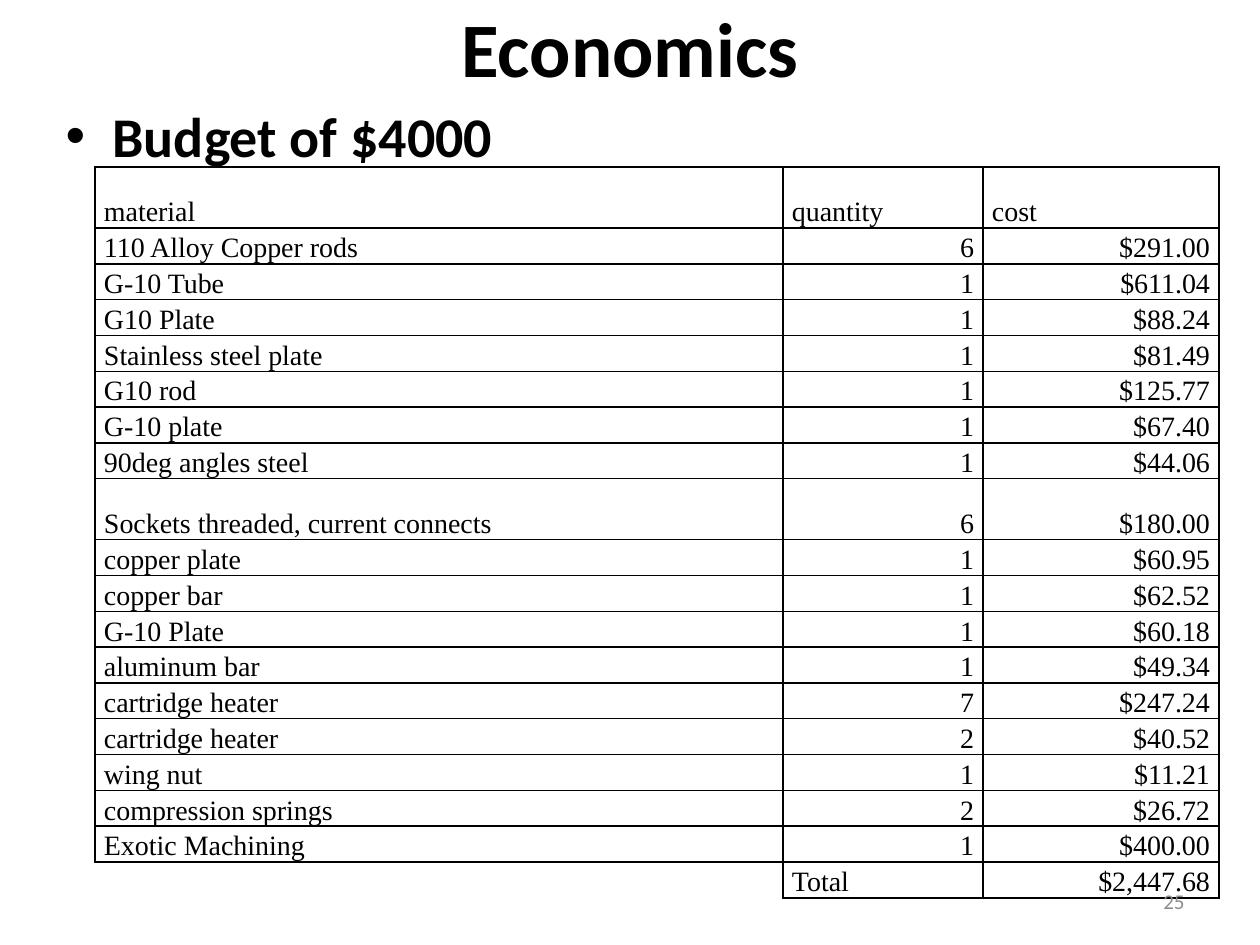
from lxml import etree
from pptx import Presentation, util as u
from pptx.dml.color import RGBColor
from pptx.enum import text
from pptx.oxml import ns

PX_PER_INCH = 126
BLACK, GREY = "000000", "8C8C8C"
NO_STYLE = "{2D5ABB26-0587-4C30-8999-92F81FD0307C}"
LEFT, CENTER, RIGHT = (getattr(text.PP_ALIGN, side) for side in ("LEFT", "CENTER", "RIGHT"))

COLUMNS = (688, 200, 236)
ROW, TALL_ROW = 34, 61
TALL_ITEMS = ("material", "Sockets threaded, current connects")
BUDGET = [
    ("material", "quantity", "cost"),
    ("110 Alloy Copper rods", "6", "$291.00"),
    ("G-10 Tube", "1", "$611.04"),
    ("G10 Plate", "1", "$88.24"),
    ("Stainless steel plate", "1", "$81.49"),
    ("G10 rod", "1", "$125.77"),
    ("G-10 plate", "1", "$67.40"),
    ("90deg angles steel", "1", "$44.06"),
    ("Sockets threaded, current connects", "6", "$180.00"),
    ("copper plate", "1", "$60.95"),
    ("copper bar", "1", "$62.52"),
    ("G-10 Plate", "1", "$60.18"),
    ("aluminum bar", "1", "$49.34"),
    ("cartridge heater", "7", "$247.24"),
    ("cartridge heater", "2", "$40.52"),
    ("wing nut", "1", "$11.21"),
    ("compression springs", "2", "$26.72"),
    ("Exotic Machining", "1", "$400.00"),
    ("", "Total", "$2,447.68"),
]


def px(length):
    return u.Inches(length / PX_PER_INCH)


def paint(target, colour):
    target.rgb = RGBColor.from_string(colour)


def apply(target, **formats):
    for name, value in formats.items():
        setattr(target, name, value)


def place(shape, left, top, width, height):
    apply(shape, left=px(left), top=px(top), width=px(width), height=px(height))


def write(para, words, size, face="Calibri", colour=BLACK, bold=False, **formats):
    apply(para, **formats)
    span = para.add_run()
    span.text = words
    apply(span.font, size=u.Pt(size), name=face, bold=bold)
    paint(span.font.color, colour)


def add_bullet(para, indent):
    """Give the paragraph a round bullet with a hanging indent."""
    properties = para._p.get_or_add_pPr()
    properties.set("marL", str(px(indent)))
    properties.set("indent", str(-px(indent)))
    etree.SubElement(properties, ns.qn("a:buChar"), char="•")


def add_borders(cell, sides):
    """Draw black one-point lines; they come before the fill in the cell."""
    properties = cell._tc.get_or_add_tcPr()
    for index, side in enumerate(sides):
        line = etree.Element(ns.qn(f"a:ln{side}"), w=str(u.Pt(1)))
        fill = etree.SubElement(line, ns.qn("a:solidFill"))
        etree.SubElement(fill, ns.qn("a:srgbClr"), val=BLACK)
        properties.insert(index, line)


def fill_cell(cell, words, align):
    apply(cell, margin_left=px(9), margin_right=px(9), margin_top=0, margin_bottom=0,
          vertical_anchor=text.MSO_ANCHOR.BOTTOM)
    cell.fill.background()
    para = cell.text_frame.paragraphs[0]
    if words:
        write(para, words, 16, "Times New Roman", alignment=align, line_spacing=1.15)
        add_borders(cell, "LRTB")
    else:
        etree.SubElement(para._p, ns.qn("a:endParaRPr"), sz="1600")
        add_borders(cell, "RT")


def add_budget_table(page, left, top):
    heights = [TALL_ROW if row[0] in TALL_ITEMS else ROW for row in BUDGET]
    frame = page.shapes.add_table(len(BUDGET), len(COLUMNS), px(left), px(top),
                                  px(sum(COLUMNS)), px(sum(heights)))
    table = frame.table
    apply(table, first_row=False, horz_banding=False)
    table._tbl.tblPr.find(ns.qn("a:tableStyleId")).text = NO_STYLE
    for column, width in zip(table.columns, COLUMNS):
        column.width = px(width)
    for r, (row, height) in enumerate(zip(BUDGET, heights)):
        table.rows[r].height = px(height)
        for c, words in enumerate(row):
            is_number = words.lstrip("$")[:1].isdigit() and c > 0
            fill_cell(table.cell(r, c), words, RIGHT if is_number else LEFT)


def add_page_number(page, number):
    box = page.shapes.add_textbox(0, 0, 0, 0)
    place(box, 903, 876, 294, 50)
    apply(box.text_frame, word_wrap=True, vertical_anchor=text.MSO_ANCHOR.MIDDLE)
    write(box.text_frame.paragraphs[0], number, 12, colour=GREY, alignment=RIGHT)


def main():
    deck = Presentation()
    apply(deck, slide_width=px(1260), slide_height=px(945))
    page = deck.slides.add_slide(deck.slide_layouts[1])

    # Title and budget bullet
    title, body = page.placeholders
    place(title, 0, -32, 1134, 158)
    title.left = px(63)
    title.text_frame.vertical_anchor = text.MSO_ANCHOR.MIDDLE
    write(title.text_frame.paragraphs[0], "Economics", 44, bold=True, alignment=CENTER)
    place(body, 53, 95, 1134, 624)
    bullet = body.text_frame.paragraphs[0]
    write(bullet, "Budget of $4000", 32, bold=True)
    add_bullet(bullet, 47)

    # Costs and page number
    add_budget_table(page, 95, 167)
    add_page_number(page, "25")

    deck.save("out.pptx")


if __name__ == "__main__":
    main()
